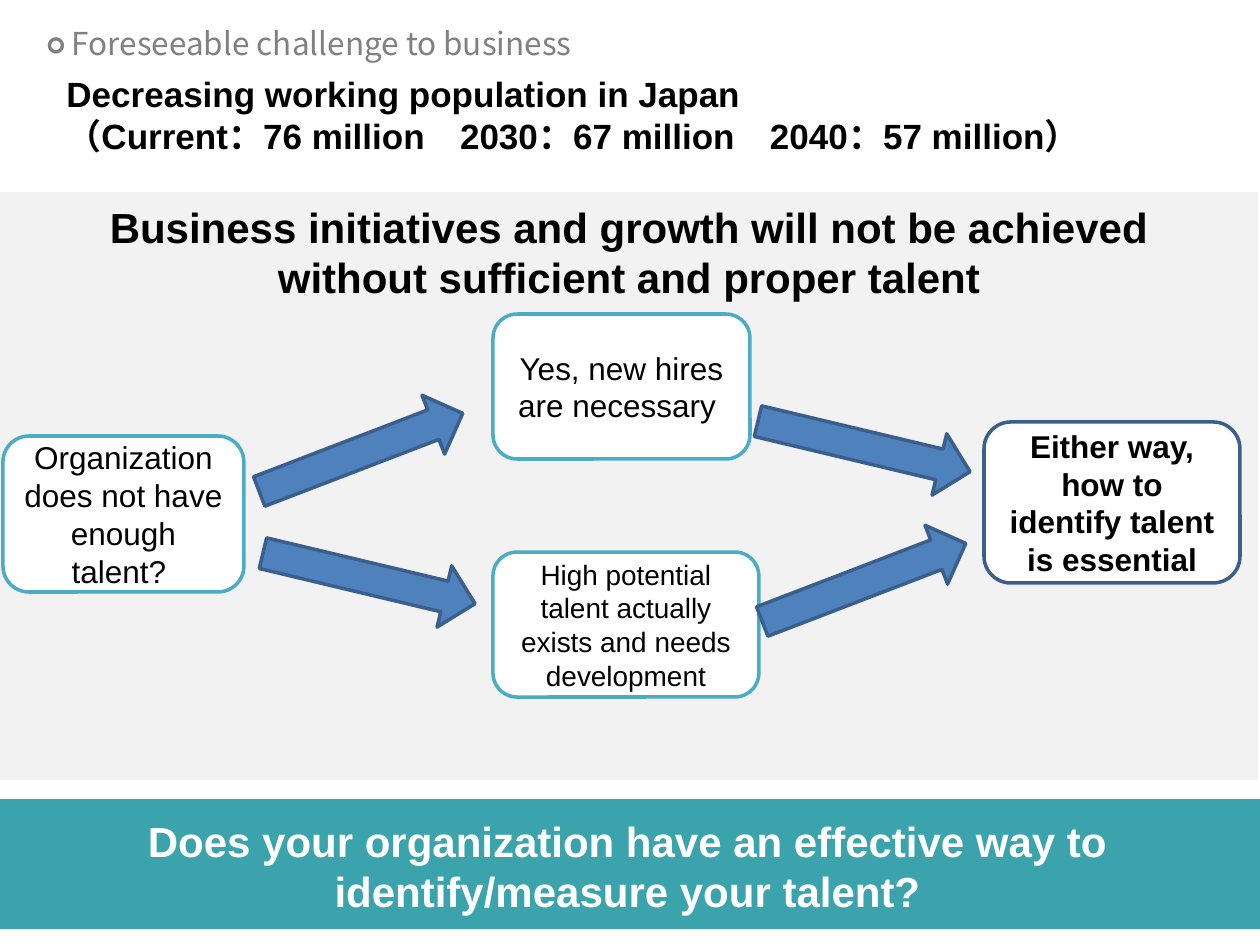
import pptx
import pptx.util
import pptx.dml.color
import pptx.enum.shapes
import pptx.enum.text

SCALE = 914400 / 126
KIND = pptx.enum.shapes.MSO_SHAPE
ALIGN = pptx.enum.text.PP_ALIGN
ANCHOR = pptx.enum.text.MSO_ANCHOR
COLORS = {
    "panel": "F2F2F2", "teal": "3BA3AB", "white": "FFFFFF", "black": "000000",
    "gray": "808080", "aqua": "4BACC6", "blue": "4F81BD", "navy": "3A5F8C",
}


def px(n):
    return pptx.util.Emu(round(n * SCALE))


def color(name):
    return pptx.dml.color.RGBColor.from_string(COLORS[name])


def add_run(para, text, size, tint="black", bold=False, font="Arial"):
    run = para.add_run()
    run.text = text
    run.font.size = pptx.util.Pt(size)
    run.font.name = font
    run.font.bold = bold
    run.font.color.rgb = color(tint)


def add_shape(slide, kind, area, fill, line=None):
    shape = slide.shapes.add_shape(kind, *map(px, area))
    shape.shadow.inherit = False
    shape.fill.solid()
    shape.fill.fore_color.rgb = color(fill)
    if line:
        shape.line.color.rgb = color(line)
        shape.line.width = pptx.util.Pt(2)
    else:
        shape.line.fill.background()
    return shape


def add_card(slide, area, text, size=18, line="aqua", bold=False):
    frame = add_shape(slide, KIND.ROUNDED_RECTANGLE, area, "white", line).text_frame
    frame.word_wrap = True
    frame.vertical_anchor = ANCHOR.MIDDLE
    para = frame.paragraphs[0]
    para.alignment = ALIGN.CENTER
    add_run(para, text, size, bold=bold)


def add_arrow(slide, left, top, turn):
    arrow = add_shape(slide, KIND.RIGHT_ARROW, (left, top, 218, 63), "blue", "navy")
    arrow.rotation = turn


def add_text(slide, area, lines, align=ALIGN.LEFT):
    """Add a text box; each line is a list of add_run arguments."""
    frame = slide.shapes.add_textbox(*map(px, area)).text_frame
    frame.word_wrap = True
    for i, runs in enumerate(lines):
        para = frame.add_paragraph() if i else frame.paragraphs[0]
        para.alignment = align
        for run in runs:
            add_run(para, *run)


def main():
    deck = pptx.Presentation()
    deck.slide_width, deck.slide_height = px(1260), px(945)
    slide = deck.slides.add_slide(deck.slide_layouts[6])

    add_shape(slide, KIND.RECTANGLE, (-2, 192, 1260, 588), "panel")
    add_shape(slide, KIND.RECTANGLE, (0, 799, 1260, 130), "teal")
    add_text(slide, (0, 809, 1255, 93), [[(
        "Does your organization have an effective way to identify/measure your talent?",
        24, "white", True)]], ALIGN.CENTER)
    add_text(slide, (54, 66, 1150, 136), [
        [("Decreasing working population in Japan", 20, "black", True)],
        [("（Current：76 million　2030：67 million　2040：57 million）", 20, "black", True)],
    ])

    add_card(slide, (3, 436, 241, 156), "Organization does not have enough talent? ")
    add_card(slide, (493, 552, 266, 145),
             "High potential talent actually exists and needs development", size=16)
    add_card(slide, (493, 314, 257, 145), "Yes, new hires are necessary ")
    up, down = 339, 13.4
    for left, top, turn in [(252, 421, up), (260, 547, down),
                            (755, 551, up), (755, 415, down)]:
        add_arrow(slide, left, top, turn)
    add_text(slide, (54, 195, 1150, 115), [[(
        "Business initiatives and growth will not be achieved "
        "without sufficient and proper talent", 24, "black", True)]], ALIGN.CENTER)
    add_card(slide, (984, 422, 256, 161),
             "Either way, how to identify talent is essential", line="navy", bold=True)
    add_text(slide, (35, 18, 1096, 73), [[
        ("○ ", 18, "gray", True, "Calibri"),
        ("Foreseeable challenge to business", 18, "gray", False, "Noto Sans CJK JP"),
    ]])

    deck.save("out.pptx")


if __name__ == "__main__":
    main()
